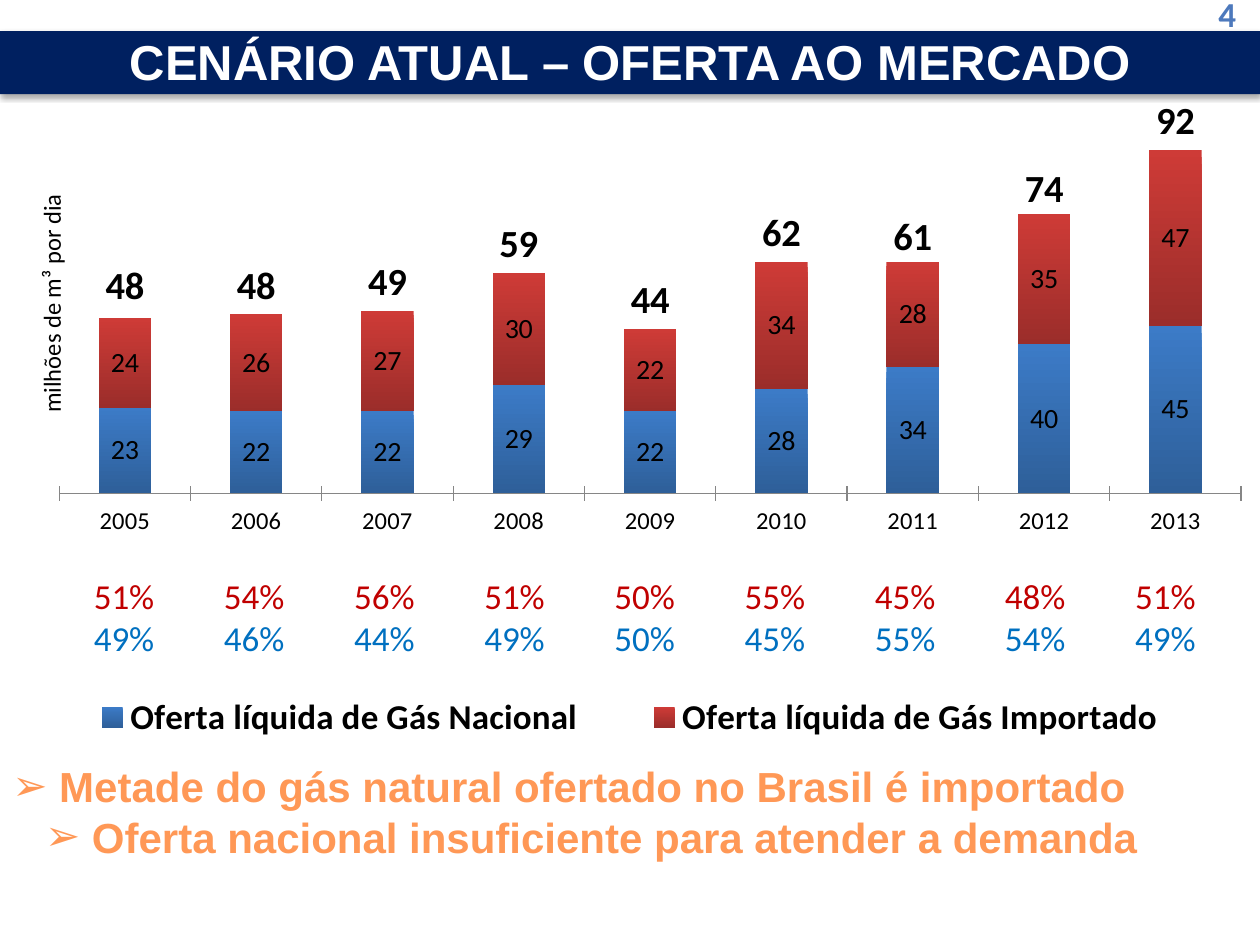
from copy import deepcopy

from lxml.etree import SubElement
from pptx import Presentation
from pptx.chart.data import CategoryChartData
from pptx.dml.color import RGBColor
from pptx.enum.chart import XL_CHART_TYPE, XL_LABEL_POSITION, XL_LEGEND_POSITION, XL_MARKER_STYLE, XL_TICK_MARK
from pptx.enum.shapes import MSO_SHAPE
from pptx.enum.text import MSO_ANCHOR, PP_ALIGN
from pptx.oxml import parse_xml
from pptx.oxml.ns import nsdecls, qn
from pptx.util import Cm, Pt

TITLE = "CENÁRIO ATUAL – OFERTA AO MERCADO"
PAGE = "4"
UNIT = "milhões de m³ por dia"
YEARS = [str(year) for year in range(2005, 2014)]
SUPPLIES = [
    ("Oferta líquida de Gás Nacional", [23, 22, 22, 29, 22, 28, 34, 40, 45], ("3C7BC7", "2E5F99")),
    ("Oferta líquida de Gás Importado", [24, 26, 27, 30, 22, 34, 28, 35, 47], ("CE3B37", "9B2D2A")),
]
TOTALS = ("Series 3", [48, 48, 49, 59, 44, 62, 61, 74, 92])
SHARES = [
    ("C00000", ["51%", "54%", "56%", "51%", "50%", "55%", "45%", "48%", "51%"]),
    ("0070C0", ["49%", "46%", "44%", "49%", "50%", "45%", "55%", "54%", "49%"]),
]
CONCLUSIONS = [
    (" Metade do gás natural ofertado no Brasil é importado", 0),
    (" Oferta nacional insuficiente para atender a demanda", 1),
]


def color(code):
    return RGBColor.from_string(code)


def style(font, size, code, bold=False, name="Calibri"):
    font.size, font.bold, font.name = Pt(size), bold, name
    font.color.rgb = color(code)


def add_run(paragraph, text, size, code, bold=False, name="Calibri"):
    run = paragraph.add_run()
    run.text = text
    style(run.font, size, code, bold, name)


def add_box(slide, left, top, width, height, anchor=MSO_ANCHOR.TOP):
    box = slide.shapes.add_textbox(Cm(left), Cm(top), Cm(width), Cm(height))
    box.text_frame.word_wrap = True
    box.text_frame.vertical_anchor = anchor
    return box


def add_header(slide):
    band = slide.shapes.add_shape(MSO_SHAPE.RECTANGLE, 0, Cm(0.63), Cm(25.4), Cm(1.27))
    band.fill.solid()
    band.fill.fore_color.rgb = color("002060")
    band.line.fill.background()
    band._element.spPr.append(parse_xml(
        f'<a:effectLst {nsdecls("a")}><a:outerShdw blurRad="{Pt(3.1)}" dist="{Pt(1.8)}" dir="5400000">'
        '<a:srgbClr val="000000"><a:alpha val="35000"/></a:srgbClr></a:outerShdw></a:effectLst>'))
    page = add_box(slide, 24.31, -0.28, 1, 1.12)
    add_run(page.text_frame.paragraphs[0], PAGE, 20, "4D79BC", True)
    title = add_box(slide, 0, 0.53, 25.4, 1.4, MSO_ANCHOR.MIDDLE).text_frame.paragraphs[0]
    title.alignment = PP_ALIGN.CENTER
    add_run(title, TITLE, 28, "FFFFFF", True, "Arial")


def set_layout(parent, index, x, y, w, h, target=""):
    for layout in parent.findall(qn("c:layout")):
        parent.remove(layout)
    sizes = "".join(f'<c:{tag} val="{value}"/>' for tag, value in zip("xywh", (x, y, w, h)))
    parent.insert(index, parse_xml(
        f'<c:layout {nsdecls("c")}><c:manualLayout>{target}<c:xMode val="edge"/>'
        f'<c:yMode val="edge"/>{sizes}</c:manualLayout></c:layout>'))


def label(series, size, bold=False):
    labels = series.data_labels
    labels.show_value = True
    labels.number_format, labels.number_format_is_linked = "#,##0", False
    style(labels.font, size, "000000", bold)
    return labels


def move_totals_to_line(plot_area):
    bars = plot_area.find(qn("c:barChart"))
    totals = bars.findall(qn("c:ser"))[-1]
    for flag in totals.findall(qn("c:invertIfNegative")):
        totals.remove(flag)
    line = parse_xml(f'<c:lineChart {nsdecls("c")}><c:grouping val="standard"/><c:varyColors val="0"/>'
                     '<c:marker val="1"/><c:axId val="5001"/><c:axId val="5002"/></c:lineChart>')
    line.insert(2, totals)
    bars.addnext(line)
    last = plot_area.find(qn("c:valAx"))
    for tag, own, other in (("c:valAx", "5002", "5001"), ("c:catAx", "5001", "5002")):
        axis = deepcopy(plot_area.find(qn(tag)))
        for part, value in (("c:axId", own), ("c:crossAx", other), ("c:delete", "1")):
            axis.find(qn(part)).set("val", value)
        if tag == "c:valAx":
            axis.find(qn("c:axPos")).set("val", "r")
            axis.find(qn("c:crosses")).set("val", "max")
        last.addnext(axis)
        last = axis


def add_supply_chart(slide):
    data = CategoryChartData(number_format="#,##0")
    data.categories = YEARS
    for name, values, *_ in [*SUPPLIES, TOTALS]:
        data.add_series(name, values)
    chart = slide.shapes.add_chart(
        XL_CHART_TYPE.COLUMN_STACKED, 0, Cm(1.98), Cm(25.4), Cm(13.49), data).chart
    style(chart.font, 10, "000000")
    chart.has_title = False
    years, scale = chart.category_axis, chart.value_axis
    style(years.tick_labels.font, 14, "000000")
    years.major_tick_mark = XL_TICK_MARK.CROSS
    years.format.line.color.rgb = color("868686")
    scale.minimum_scale, scale.maximum_scale, scale.major_unit = 0, 100, 25
    scale.has_major_gridlines = scale.visible = False

    plot_area = chart._chartSpace.chart.plotArea
    move_totals_to_line(plot_area)
    set_layout(plot_area, 0, 0.047, 0.029, 0.938, 0.56, '<c:layoutTarget val="inner"/>')
    bars, line = chart.plots
    bars.gap_width, bars.overlap, bars.vary_by_categories = 150, 100, False
    for series, (_, _, shades) in zip(bars.series, SUPPLIES):
        fill = series.format.fill
        fill.gradient()
        fill.gradient_angle = 270
        for stop, shade in zip(fill.gradient_stops, shades):
            stop.color.rgb = color(shade)
        label(series, 16)
    totals = line.series[0]
    totals.smooth = False
    totals.format.line.fill.background()
    totals.marker.style = XL_MARKER_STYLE.NONE
    label(totals, 22, True).position = XL_LABEL_POSITION.ABOVE

    chart.has_legend = True
    legend = chart.legend
    legend.position, legend.include_in_layout = XL_LEGEND_POSITION.BOTTOM, False
    style(legend.font, 20, "000000", True)
    hidden = parse_xml(f'<c:legendEntry {nsdecls("c")}><c:idx val="2"/><c:delete val="1"/></c:legendEntry>')
    legend._element.insert(1, hidden)
    set_layout(legend._element, 2, 0.03, 0.885, 0.94, 0.08)

    unit = add_box(slide, -1.97, 5.62, 6, 1, MSO_ANCHOR.MIDDLE)
    unit.rotation = -90
    unit.text_frame.paragraphs[0].alignment = PP_ALIGN.CENTER
    add_run(unit.text_frame.paragraphs[0], UNIT, 14, "000000")


def add_share_table(slide):
    table = slide.shapes.add_table(
        len(SHARES), len(YEARS), Cm(1.19), Cm(11.61), Cm(23.62), Cm(1.7)).table
    table.first_row = table.horz_banding = False
    for row, (code, shares) in enumerate(SHARES):
        for column, share in enumerate(shares):
            cell = table.cell(row, column)
            cell.fill.background()
            cell.margin_left = cell.margin_right = cell.margin_top = cell.margin_bottom = 0
            cell.vertical_anchor = MSO_ANCHOR.BOTTOM
            paragraph = cell.text_frame.paragraphs[0]
            paragraph.alignment = PP_ALIGN.CENTER
            add_run(paragraph, share, 20, code)


def add_conclusions(slide):
    frame = add_box(slide, 0, 15.21, 25.4, 2.31).text_frame
    for index, (text, level) in enumerate(CONCLUSIONS):
        paragraph = frame.add_paragraph() if index else frame.paragraphs[0]
        paragraph.level = level
        properties = paragraph._p.get_or_add_pPr()
        properties.set("marL", str(Cm(0.66) * level))
        properties.set("indent", "0")
        SubElement(properties, qn("a:buFont")).set("typeface", "Arial")
        SubElement(properties, qn("a:buChar")).set("char", "➢")
        add_run(paragraph, text, 24, "FF9856", True, "Arial")


def main():
    """Build the slide on the gas supply to the market."""
    deck = Presentation()
    deck.slide_width, deck.slide_height = Cm(25.4), Cm(19.05)
    slide = deck.slides.add_slide(deck.slide_layouts[6])
    add_header(slide)
    add_supply_chart(slide)
    add_share_table(slide)
    add_conclusions(slide)
    deck.save("out.pptx")


if __name__ == "__main__":
    main()
